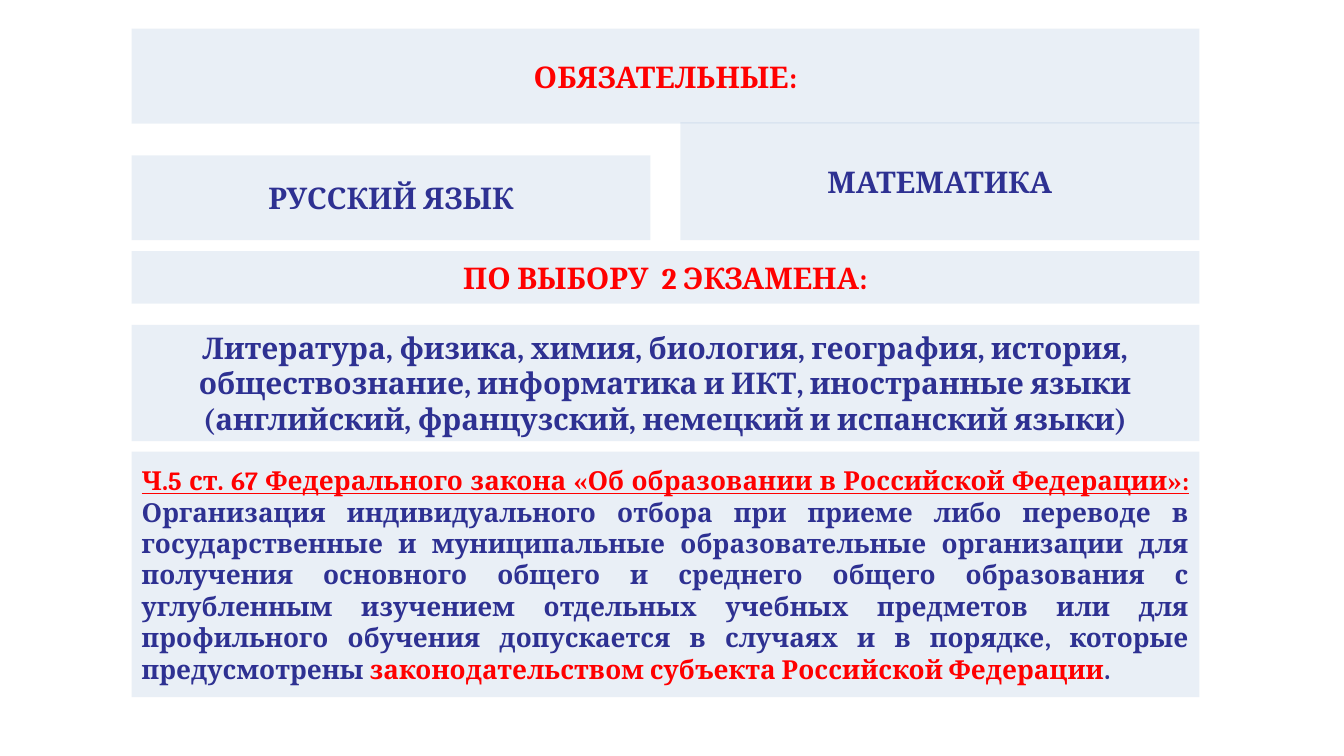
from dataclasses import dataclass

from lxml import etree
from pptx import Presentation
from pptx.dml.color import RGBColor
from pptx.enum.shapes import MSO_SHAPE
from pptx.enum.text import MSO_ANCHOR, PP_ALIGN
from pptx.oxml.ns import qn
from pptx.util import Pt

RECT = MSO_SHAPE.RECTANGLE
MIDDLE = MSO_ANCHOR.MIDDLE
CENTER = PP_ALIGN.CENTER
JUSTIFY = PP_ALIGN.JUSTIFY


@dataclass(frozen=True)
class Theme:
    """Hold the colours, font and type sizes of the slide."""
    panel: RGBColor = RGBColor(0xB9, 0xCD, 0xE5)
    alpha: int = 31
    red: RGBColor = RGBColor(0xFF, 0x00, 0x00)
    navy: RGBColor = RGBColor(0x2E, 0x31, 0x92)
    font: str = "Cambria"
    large: int = 16
    small: int = 14


THEME = Theme()
LEFT, WIDE, HALF = 70.5, 572, 278
RIGHT = LEFT + WIDE - HALF


def add_run(para, text, color, size, under=False):
    """Append one bold run to a paragraph."""
    run = para.add_run()
    run.text = text
    font = run.font
    font.name = THEME.font
    font.size = Pt(size)
    font.bold = True
    font.underline = under
    font.color.rgb = color


def add_panel(slide, left, top, width, height, align=CENTER):
    """Add a translucent panel and return its paragraph."""
    panel = slide.shapes.add_shape(RECT, Pt(left), Pt(top), Pt(width), Pt(height))
    panel.shadow.inherit = False
    panel.line.fill.background()
    panel.fill.solid()
    panel.fill.fore_color.rgb = THEME.panel
    tint = panel.fill._xPr.find(qn("a:solidFill"))[0]
    etree.SubElement(tint, qn("a:alpha"), val=str(THEME.alpha * 1000))
    frame = panel.text_frame
    frame.word_wrap = True
    frame.vertical_anchor = MIDDLE
    frame.margin_left = frame.margin_right = Pt(5.4)
    frame.margin_top = frame.margin_bottom = Pt(2.7)
    para = frame.paragraphs[0]
    para.alignment = align
    return para


def add_label(slide, left, top, width, height, text, color):
    """Add a panel with one centred text."""
    para = add_panel(slide, left, top, width, height)
    add_run(para, text, color, THEME.large)


def add_law(slide):
    """Add the justified passage of the law."""
    para = add_panel(slide, LEFT, 242, WIDE, 131.5, JUSTIFY)
    add_run(para, "Ч.5 ст. 67 Федерального закона «Об образовании в Российской Федерации»: ",
            THEME.red, THEME.small, True)
    parts = (
        ("Организация индивидуального отбора при приеме либо переводе в "
         "государственные и муниципальные образовательные организации для "
         "получения основного общего и среднего общего образования с "
         "углубленным изучением отдельных учебных предметов или для "
         "профильного обучения допускается в случаях и в порядке, которые "
         "предусмотрены ", THEME.navy),
        ("законодательством субъекта Российской Федерации", THEME.red),
        (".", THEME.navy),
    )
    for text, color in parts:
        add_run(para, text, color, THEME.small)


def main():
    """Build and save the slide about exams."""
    deck = Presentation()
    deck.slide_width, deck.slide_height = Pt(720), Pt(405)
    slide = deck.slides.add_slide(deck.slide_layouts[6])
    labels = (
        (LEFT, 15.3, WIDE, 51, "ОБЯЗАТЕЛЬНЫЕ:", THEME.red),
        (LEFT, 83.3, HALF, 45.4, "РУССКИЙ ЯЗЫК", THEME.navy),
        (RIGHT, 65.5, HALF, 63.2, "МАТЕМАТИКА", THEME.navy),
        (LEFT, 134.5, WIDE, 28.2, "ПО ВЫБОРУ  2 ЭКЗАМЕНА:", THEME.red),
        (LEFT, 174, WIDE, 62.4,
         "Литература, физика, химия, биология, география, история, "
         "обществознание, информатика и ИКТ, иностранные языки "
         "(английский, французский, немецкий и испанский языки)", THEME.navy),
    )
    for label in labels:
        add_label(slide, *label)
    add_law(slide)
    deck.save("out.pptx")


if __name__ == "__main__":
    main()
